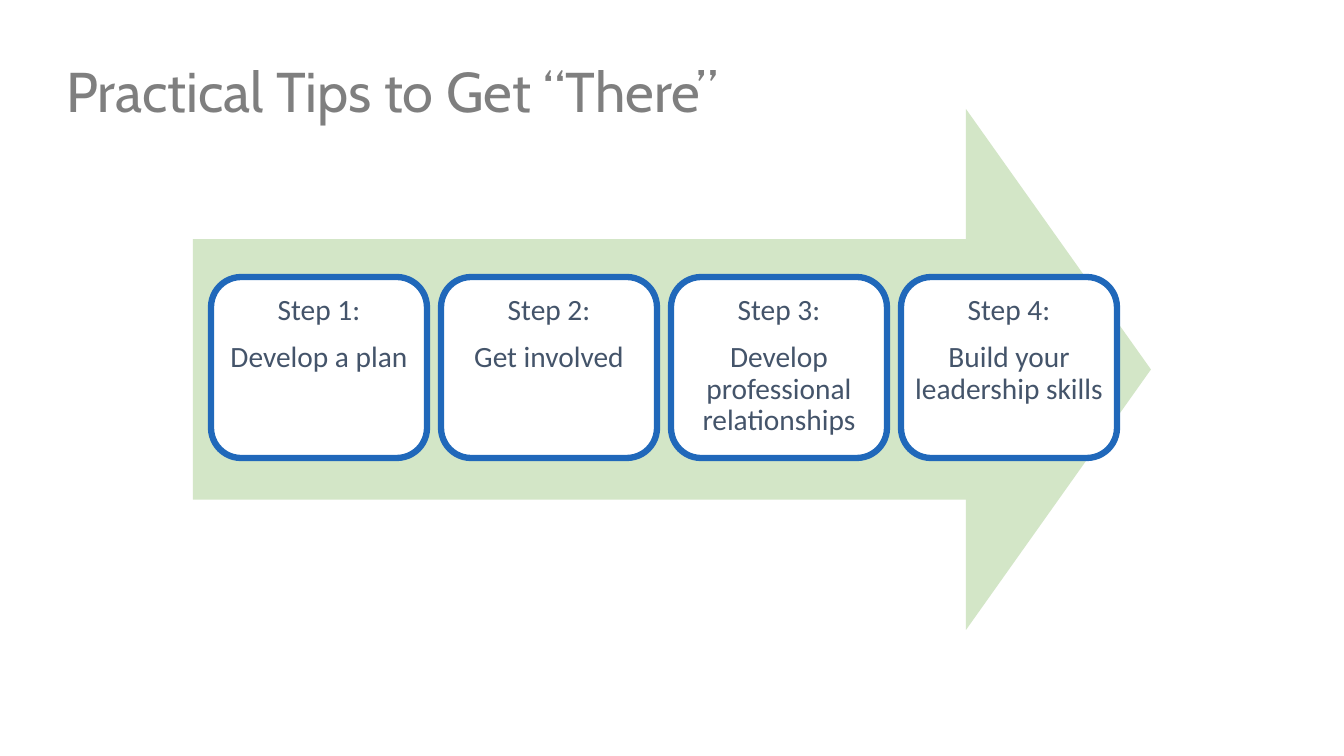
from lxml.etree import SubElement
from pptx import Presentation
from pptx.dml.color import RGBColor
from pptx.enum.shapes import MSO_SHAPE
from pptx.enum.text import MSO_ANCHOR, PP_ALIGN
from pptx.oxml.ns import qn
from pptx.util import Inches, Pt

PX_PER_INCH = 100.8
COLORS = {
    "title": "7F7F7F",
    "arrow": "70AD47",
    "card": "FFFFFF",
    "outline": "2068BA",
    "text": "44546A",
}
STEPS = [
    ("Step 1:", "Develop a plan"),
    ("Step 2:", "Get involved"),
    ("Step 3:", "Develop professional relationships"),
    ("Step 4:", "Build your leadership skills"),
]
CARD_LEFT, CARD_TOP, CARD_WIDTH, CARD_HEIGHT = 211, 277, 216, 181
CARD_PITCH = 230


def px(n):
    return Inches(n / PX_PER_INCH)


def color(name):
    return RGBColor.from_string(COLORS[name])


def write(p, text, font, size, fill, align=PP_ALIGN.LEFT, before=0):
    p.alignment = align
    p.line_spacing = 0.9
    p.space_before = Pt(before)
    r = p.add_run()
    r.text = text
    r.font.name = font
    r.font.size = Pt(size)
    r.font.color.rgb = color(fill)


def add_shape(s, kind, x, y, w, h, fill):
    sp = s.shapes.add_shape(kind, px(x), px(y), px(w), px(h))
    sp.shadow.inherit = False
    sp.fill.solid()
    sp.fill.fore_color.rgb = color(fill)
    sp.line.fill.background()
    return sp


def add_title(s, text):
    sp = s.shapes.title
    sp.left, sp.top, sp.width, sp.height = px(56), px(59), px(1225), px(102)
    tf = sp.text_frame
    tf.vertical_anchor = MSO_ANCHOR.TOP
    write(tf.paragraphs[0], text, "Cabin", 40, "title")


def add_arrow(s):
    sp = add_shape(s, MSO_SHAPE.RIGHT_ARROW, 193, 109, 958, 521, "arrow")
    sp.adjustments[0] = 0.5
    sp.adjustments[1] = 0.355
    srgb = sp.fill._xPr.find(qn("a:solidFill")).find(qn("a:srgbClr"))
    SubElement(srgb, qn("a:alpha"), val="30000")


def add_card(s, x, heading, tip):
    sp = add_shape(s, MSO_SHAPE.ROUNDED_RECTANGLE, x, CARD_TOP,
                   CARD_WIDTH, CARD_HEIGHT, "card")
    sp.line.color.rgb = color("outline")
    sp.line.width = Pt(4.5)
    tf = sp.text_frame
    tf.word_wrap = True
    tf.vertical_anchor = MSO_ANCHOR.TOP
    tf.margin_left = tf.margin_right = 0
    tf.margin_top = tf.margin_bottom = px(9)
    write(tf.paragraphs[0], heading, "Calibri", 21, "text", align=PP_ALIGN.CENTER)
    write(tf.add_paragraph(), tip, "Calibri", 21, "text",
          align=PP_ALIGN.CENTER, before=11)


def main():
    prs = Presentation()
    prs.slide_width = px(1344)
    prs.slide_height = px(756)
    s = prs.slides.add_slide(prs.slide_layouts[5])
    add_title(s, "Practical Tips to Get “There”")
    add_arrow(s)
    for i, (heading, tip) in enumerate(STEPS):
        add_card(s, CARD_LEFT + i * CARD_PITCH, heading, tip)
    prs.save("out.pptx")


if __name__ == "__main__":
    main()
